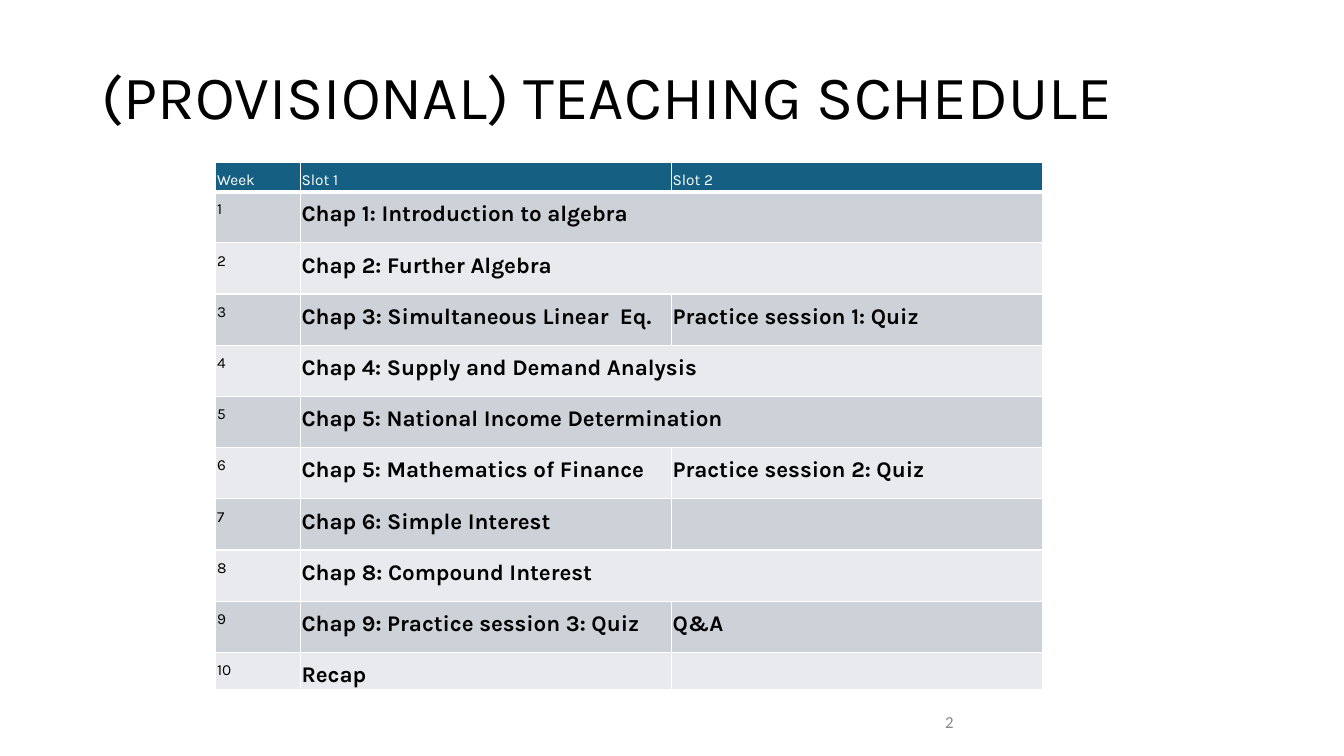
from lxml import etree
from pptx import Presentation
from pptx.dml.color import RGBColor
from pptx.enum.text import MSO_ANCHOR, PP_ALIGN
from pptx.oxml.ns import qn
from pptx.util import Cm, Pt

MIDDLE = MSO_ANCHOR.MIDDLE
LEFT, RIGHT = PP_ALIGN.LEFT, PP_ALIGN.RIGHT

BLACK = RGBColor(0x00, 0x00, 0x00)
WHITE = RGBColor(0xFF, 0xFF, 0xFF)
GRAY = RGBColor(0x88, 0x88, 0x88)
TEAL = RGBColor(0x15, 0x60, 0x82)
DARK = RGBColor(0xCC, 0xD2, 0xD8)
LIGHT = RGBColor(0xE8, 0xEA, 0xED)

HEAD = ("Week", "Slot 1", "Slot 2")
# None marks a slot taken up by the one before it
WEEKS = (
    ("Chap 1: Introduction to algebra", None),
    ("Chap 2: Further Algebra", None),
    ("Chap 3: Simultaneous Linear  Eq.", "Practice session 1: Quiz"),
    ("Chap 4: Supply and Demand Analysis", None),
    ("Chap 5: National Income Determination", None),
    ("Chap 5: Mathematics of Finance", "Practice session 2: Quiz"),
    ("Chap 6: Simple Interest", ""),
    ("Chap 8: Compound Interest", None),
    ("Chap 9: Practice session 3: Quiz", "Q&A"),
    ("Recap", ""),
)
COLS = (2.13, 9.35, 9.35)
ROWS = (0.74,) + (1.29,) * 9 + (0.74,)


def style(para, name, size, color, bold=False):
    font = para.font
    font.name = name
    font.size = Pt(size)
    font.bold = bold
    font.color.rgb = color


def add_text(slide, box, text, name, size, color, align):
    shape = slide.shapes.add_textbox(*(Cm(n) for n in box))
    frame = shape.text_frame
    frame.word_wrap = True
    frame.vertical_anchor = MIDDLE
    frame.margin_left = frame.margin_right = 0
    frame.margin_top = frame.margin_bottom = 0
    para = frame.paragraphs[0]
    para.text = text
    para.alignment = align
    style(para, name, size, color)
    return para


def add_edges(cell, base):
    props = cell._tc.get_or_add_tcPr()
    for side, width in (("L", 1), ("R", 1), ("T", 1), ("B", base)):
        line = etree.SubElement(props, qn("a:ln" + side), w=str(Pt(width)))
        fill = etree.SubElement(line, qn("a:solidFill"))
        etree.SubElement(fill, qn("a:srgbClr"), val=str(WHITE))


def fill_cell(cell, text, size, color, back, bold, base):
    add_edges(cell, base)
    cell.fill.solid()
    cell.fill.fore_color.rgb = back
    cell.margin_left = cell.margin_right = Cm(0.03)
    cell.margin_top = Cm(0.2) if text else 0
    cell.margin_bottom = 0
    para = cell.text_frame.paragraphs[0]
    para.text = text
    style(para, "Karla", size, color, bold)
    if text:
        para.line_spacing = 1.07
        para.space_after = Pt(8)


def add_plan(slide, left, top):
    frame = slide.shapes.add_table(
        len(ROWS), len(COLS), Cm(left), Cm(top), Cm(sum(COLS)), Cm(sum(ROWS))
    )
    table = frame.table
    for col, width in zip(table.columns, COLS):
        col.width = Cm(width)
    for row, height in zip(table.rows, ROWS):
        row.height = Cm(height)
    for c, text in enumerate(HEAD):
        fill_cell(table.cell(0, c), text, 11, WHITE, TEAL, False, 3)
    for r, slots in enumerate(WEEKS, 1):
        back = DARK if r % 2 else LIGHT
        fill_cell(table.cell(r, 0), str(r), 11, BLACK, back, False, 1)
        for c, text in enumerate(slots, 1):
            fill_cell(table.cell(r, c), text or "", 16, BLACK, back, True, 1)
        if slots[1] is None:
            table.cell(r, 1).merge(table.cell(r, 2))


def main():
    deck = Presentation()
    deck.slide_width, deck.slide_height = Cm(33.87), Cm(19.05)
    slide = deck.slides.add_slide(deck.slide_layouts[6])
    page = add_text(
        slide, (23.34, 17.96, 0.69, 0.51), "2", "Calibri", 12, GRAY, RIGHT
    )
    page.line_spacing = Pt(12.4)
    add_text(
        slide, (2.57, 1.42, 29.21, 1.93), "(PROVISIONAL) TEACHING SCHEDULE",
        "Karla", 44, BLACK, LEFT,
    )
    add_plan(slide, 5.44, 4.09)
    deck.save("out.pptx")


if __name__ == "__main__":
    main()
